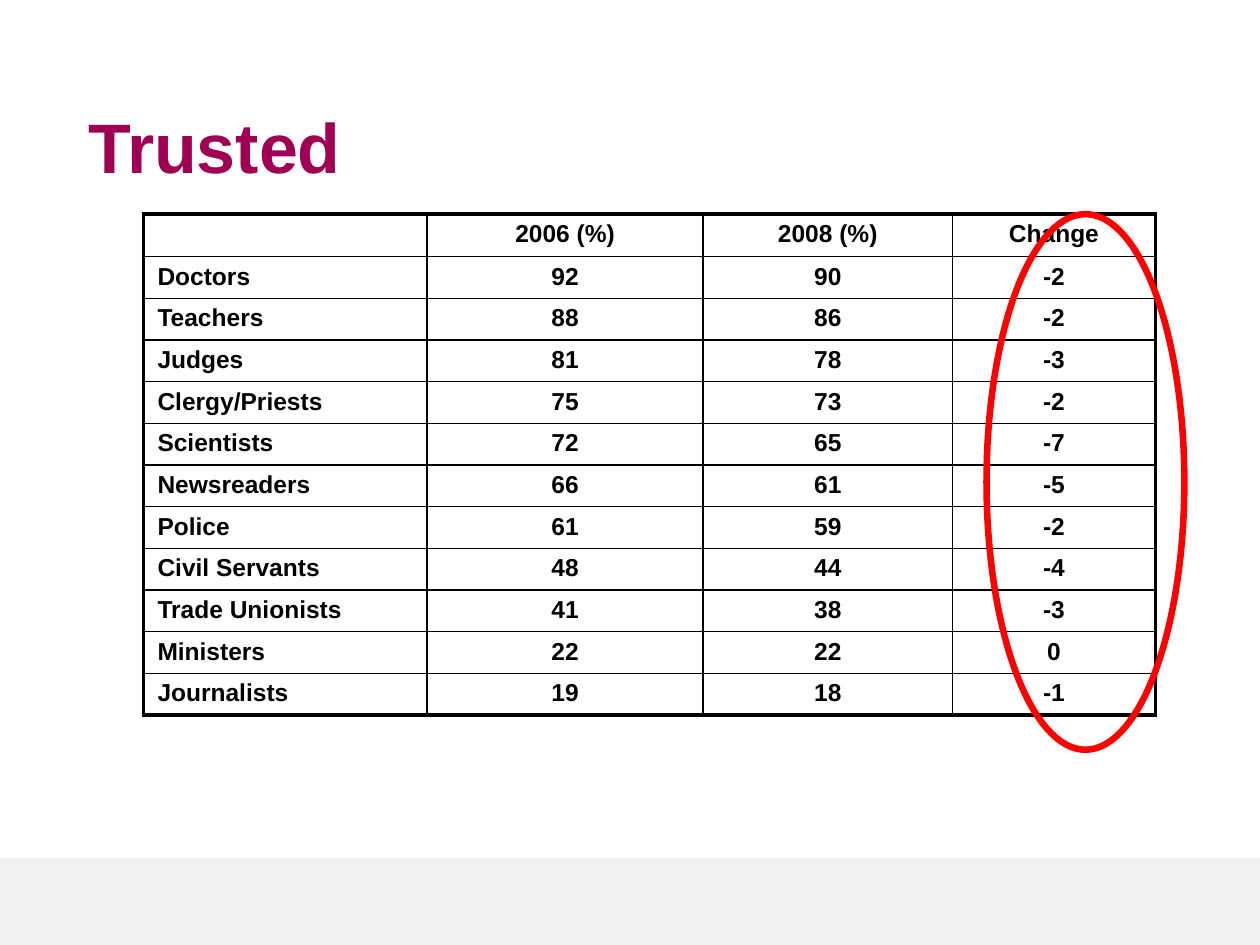
from dataclasses import dataclass

from lxml.etree import SubElement
from pptx import Presentation
from pptx.dml.color import RGBColor
from pptx.enum.shapes import MSO_SHAPE
from pptx.enum.text import MSO_ANCHOR, MSO_AUTO_SIZE, PP_ALIGN
from pptx.oxml.ns import qn
from pptx.util import Inches, Pt


@dataclass(frozen=True)
class Theme:
    font: str = "Arial"
    title_color: str = "A00054"
    text_color: str = "000000"
    band_color: str = "F2F2F2"
    highlight_color: str = "FF0000"
    title_size: int = 40
    cell_size: int = 14
    inner_border: float = 1
    outer_border: float = 2.25
    highlight_width: float = 3.75


THEME = Theme()
SLIDE_WIDTH, SLIDE_HEIGHT = 10, 7.5
BAND_TOP = 6.81
TABLE_LEFT, TABLE_TOP, TABLE_HEIGHT = 1.14, 1.7, 3.97
COLUMN_WIDTHS = [2.25, 2.19, 1.98, 1.61]
HEADER = ["", "2006 (%)", "2008 (%)", "Change"]
TRUST = [
    ("Doctors", 92, 90),
    ("Teachers", 88, 86),
    ("Judges", 81, 78),
    ("Clergy/Priests", 75, 73),
    ("Scientists", 72, 65),
    ("Newsreaders", 66, 61),
    ("Police", 61, 59),
    ("Civil Servants", 48, 44),
    ("Trade Unionists", 41, 38),
    ("Ministers", 22, 22),
    ("Journalists", 19, 18),
]


def set_format(target, values):
    for name, value in values.items():
        setattr(target, name, value)


def format_font(font, size, color):
    set_format(font, {"name": THEME.font, "size": Pt(size), "bold": True})
    font.color.rgb = RGBColor.from_string(color)


def add_plain_shape(slide, kind, left, top, width, height):
    shape = slide.shapes.add_shape(
        kind, Inches(left), Inches(top), Inches(width), Inches(height))
    shape.shadow.inherit = False
    return shape


def add_footer_band(slide):
    band = add_plain_shape(slide, MSO_SHAPE.RECTANGLE,
                           0, BAND_TOP, SLIDE_WIDTH, SLIDE_HEIGHT - BAND_TOP)
    band.fill.solid()
    band.fill.fore_color.rgb = RGBColor.from_string(THEME.band_color)
    band.line.fill.background()


def add_title(slide, text):
    title = slide.shapes.title
    set_format(title, {"left": Inches(0.59), "top": Inches(0.76),
                       "width": Inches(3.47), "height": Inches(0.79)})
    frame = title.text_frame
    set_format(frame, {
        "text": text, "word_wrap": True, "auto_size": MSO_AUTO_SIZE.NONE,
        "vertical_anchor": MSO_ANCHOR.BOTTOM,
        "margin_left": Inches(0.11), "margin_right": Inches(0.11),
        "margin_top": Inches(0.06), "margin_bottom": Inches(0.06)})
    paragraph = frame.paragraphs[0]
    paragraph.alignment = PP_ALIGN.LEFT
    format_font(paragraph.runs[0].font, THEME.title_size, THEME.title_color)


def set_border(cell, side, width):
    line = SubElement(cell._tc.get_or_add_tcPr(), qn(f"a:ln{side}"),
                      w=str(Pt(width)))
    fill = SubElement(line, qn("a:solidFill"))
    SubElement(fill, qn("a:srgbClr"), val=THEME.text_color)


def fill_cell(cell, text, alignment):
    set_format(cell, {"margin_left": Inches(0.11), "margin_right": Inches(0.11),
                      "margin_top": Inches(0.05), "margin_bottom": Inches(0.05)})
    paragraph = cell.text_frame.paragraphs[0]
    paragraph.alignment = alignment
    if text:
        run = paragraph.add_run()
        run.text = text
        format_font(run.font, THEME.cell_size, THEME.text_color)
    else:  # an empty cell takes its line height from the end mark
        SubElement(paragraph._p, qn("a:endParaRPr"), sz=str(THEME.cell_size * 100))


def add_trust_table(slide):
    rows = [HEADER] + [[name, str(before), str(after), str(after - before)]
                       for name, before, after in TRUST]
    table = slide.shapes.add_table(
        len(rows), len(HEADER), Inches(TABLE_LEFT), Inches(TABLE_TOP),
        Inches(sum(COLUMN_WIDTHS)), Inches(TABLE_HEIGHT)).table
    set_format(table, {"first_row": False, "horz_banding": False})
    for column, width in zip(table.columns, COLUMN_WIDTHS):
        column.width = Inches(width)

    last_row, last_column = len(rows) - 1, len(HEADER) - 1
    for r, row in enumerate(rows):
        for c, text in enumerate(row):
            cell = table.cell(r, c)
            fill_cell(cell, text, PP_ALIGN.CENTER if c else PP_ALIGN.LEFT)
            on_edge = {"L": c == 0, "R": c == last_column,
                       "T": r == 0, "B": r == last_row}
            for side, outer in on_edge.items():
                set_border(cell, side,
                           THEME.outer_border if outer else THEME.inner_border)
            cell.fill.background()


def add_highlight(slide):
    ellipse = add_plain_shape(slide, MSO_SHAPE.OVAL, 7.83, TABLE_TOP, 1.57, 4.25)
    ellipse.fill.background()
    ellipse.line.color.rgb = RGBColor.from_string(THEME.highlight_color)
    ellipse.line.width = Pt(THEME.highlight_width)


def main():
    presentation = Presentation()
    set_format(presentation, {"slide_width": Inches(SLIDE_WIDTH),
                              "slide_height": Inches(SLIDE_HEIGHT)})
    slide = presentation.slides.add_slide(presentation.slide_layouts[5])
    add_footer_band(slide)
    add_trust_table(slide)
    add_title(slide, "Trusted")
    add_highlight(slide)
    presentation.save("out.pptx")


if __name__ == "__main__":
    main()
